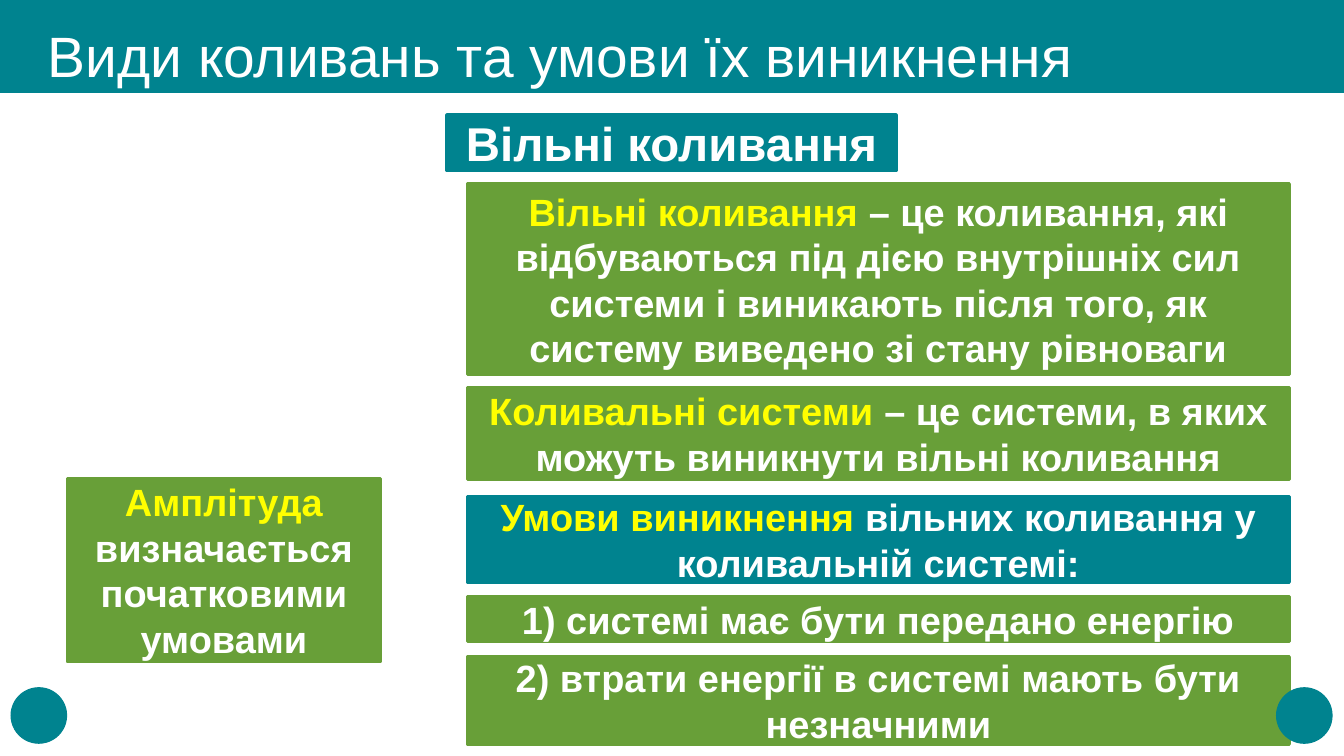
import pptx
import pptx.util
import pptx.dml.color
import pptx.enum.shapes
import pptx.enum.text

Inches = pptx.util.Inches
Pt = pptx.util.Pt
SHAPE = pptx.enum.shapes.MSO_SHAPE
ALIGN = pptx.enum.text.PP_ALIGN
ANCHOR = pptx.enum.text.MSO_ANCHOR

COLORS = {"teal": "00838F", "green": "689F38", "yellow": "FFFF00", "white": "FFFFFF"}


def rgb(name):
    return pptx.dml.color.RGBColor.from_string(COLORS[name])


class Deck:
    font = "Arial"

    def __init__(self, width, height):
        self.prs = pptx.Presentation()
        self.prs.slide_width = Inches(width)
        self.prs.slide_height = Inches(height)
        self.s = None

    def add_slide(self):
        self.s = self.prs.slides.add_slide(self.prs.slide_layouts[5])

    def run(self, p, text, size, color, bold):
        r = p.add_run()
        r.text = text
        r.font.name = self.font
        r.font.size = Pt(size)
        r.font.bold = bold
        r.font.color.rgb = rgb(color)

    def title(self, text, left, top, width, height):
        sp = self.s.shapes.title
        sp.left, sp.top = Inches(left), Inches(top)
        sp.width, sp.height = Inches(width), Inches(height)
        tf = sp.text_frame
        tf.auto_size = pptx.enum.text.MSO_AUTO_SIZE.NONE
        tf.word_wrap = True
        tf.vertical_anchor = ANCHOR.MIDDLE
        p = tf.paragraphs[0]
        p.alignment = ALIGN.LEFT
        p.line_spacing = 0.9
        self.run(p, text, 48, "white", False)

    def shape(self, kind, left, top, width, height, color, line=1):
        sp = self.s.shapes.add_shape(
            kind, Inches(left), Inches(top), Inches(width), Inches(height))
        sp.shadow.inherit = False
        sp.fill.solid()
        sp.fill.fore_color.rgb = rgb(color)
        sp.line.color.rgb = rgb(color)
        sp.line.width = Pt(line)
        return sp

    def title_band(self, width, height):
        sp = self.shape(SHAPE.RECTANGLE, 0, 0, width, height, "teal")
        self.s.shapes.title.element.addprevious(sp.element)

    def corner_dot(self, left, rotation=0):
        sp = self.shape(SHAPE.OVAL, left, 8.06, 0.65, 0.65, "teal")
        sp.rotation = rotation

    def box(self, left, top, width, height, color, term, text, size=32):
        sp = self.shape(SHAPE.RECTANGLE, left, top, width, height, color, 3)
        tf = sp.text_frame
        tf.word_wrap = True
        tf.vertical_anchor = ANCHOR.MIDDLE
        p = tf.paragraphs[0]
        p.alignment = ALIGN.CENTER
        if term:
            self.run(p, term, size, "yellow", True)
        self.run(p, text, size, "white", True)


def main():
    deck = Deck(15.75, 8.86)
    deck.add_slide()
    deck.title("Види коливань та умови їх виникнення", 0.46, 0.3, 13.58, 0.78)
    deck.title_band(15.75, 1.08)
    deck.corner_dot(0.13)
    deck.box(5.24, 1.35, 5.26, 0.65, "teal", "", "Вільні коливання", 40)

    statements = [
        (2.16, 2.23, "green", "Вільні коливання ",
         "– це коливання, які відбуваються під дією внутрішніх сил системи "
         "і виникають після того, як систему виведено зі стану рівноваги"),
        (4.54, 1.08, "green", "Коливальні системи ",
         "– це системи, в яких можуть виникнути вільні коливання"),
        (5.82, 1, "teal", "Умови виникнення",
         " вільних коливання у коливальній системі:"),
        (6.99, 0.53, "green", "", "1) системі має бути передано енергію"),
        (7.7, 1.02, "green", "", "2) втрати енергії в системі мають бути незначними"),
    ]
    for top, height, color, term, text in statements:
        deck.box(5.48, top, 9.63, height, color, term, text)

    deck.box(0.79, 5.61, 3.67, 2.14, "green", "Амплітуда ",
             "визначається початковими умовами")
    deck.corner_dot(14.96, 180)
    deck.prs.save("out.pptx")


if __name__ == "__main__":
    main()
